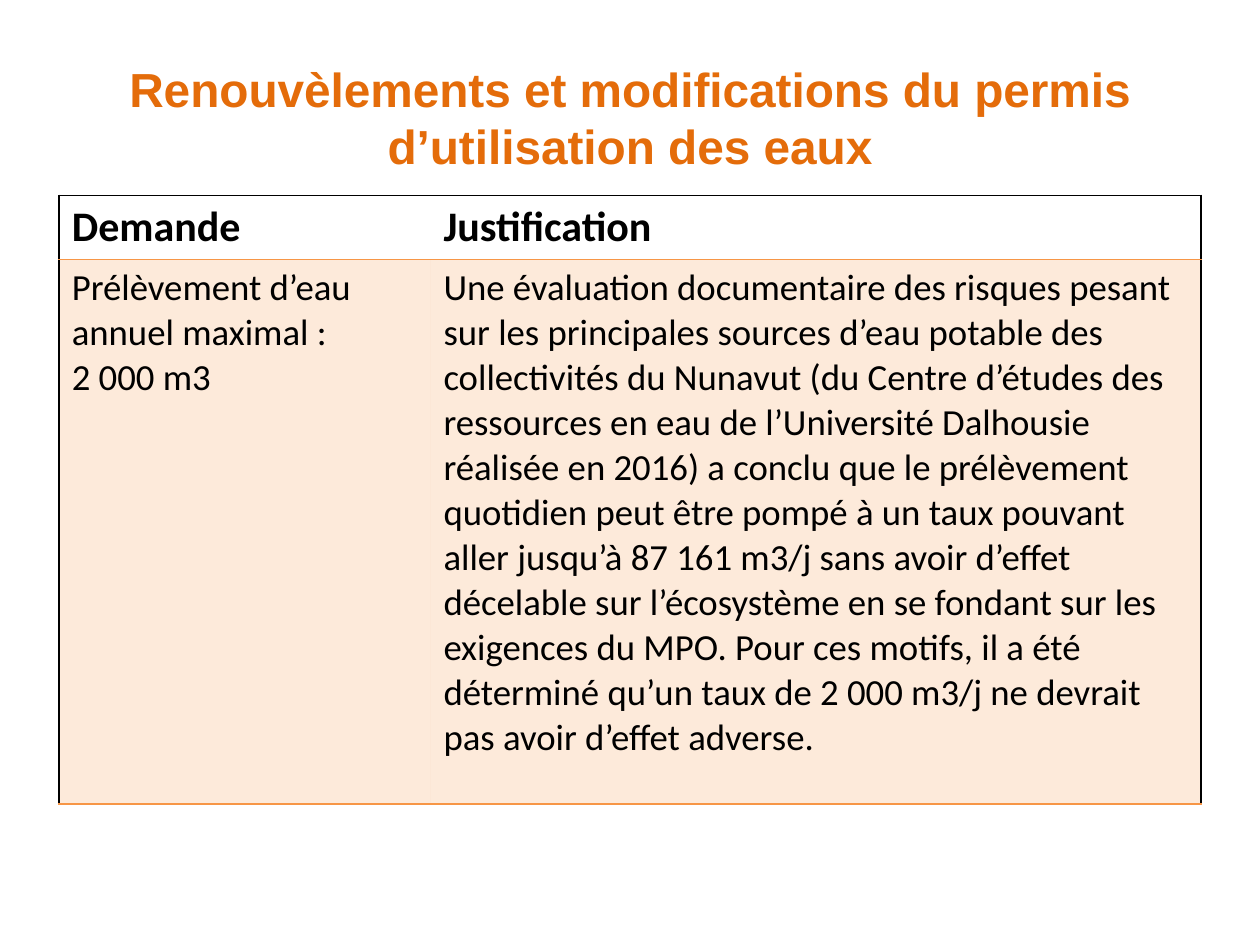
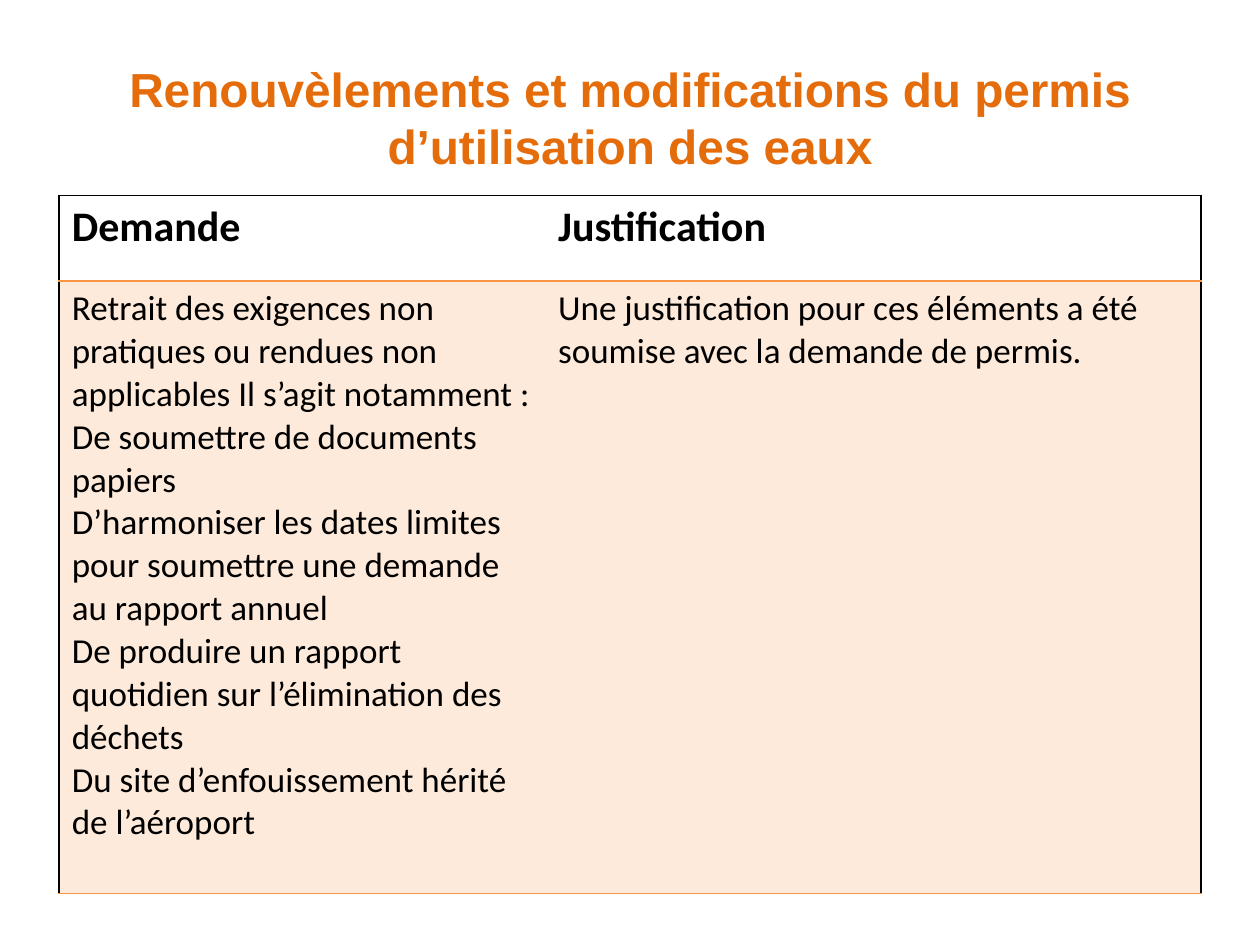
import pptx
import pptx.util
import pptx.dml.color
import pptx.enum.text
import pptx.oxml
import pptx.oxml.ns

Inches, Pt = pptx.util.Inches, pptx.util.Pt
Color = pptx.dml.color.RGBColor
qn = pptx.oxml.ns.qn

WIDE, HIGH = Inches(10), Inches(7.5)
BLACK = Color(0x00, 0x00, 0x00)
ORANGE = Color(0xF7, 0x96, 0x46)
RUST = Color(0xE4, 0x6C, 0x0A)
TINT = 20
PLAIN = "{2D5ABB26-0587-4C30-8999-92F81FD0307C}"

EDGE = 0.047
TOP = Inches(1.55)
TITLE = "Renouvèlements et modifications du permis d’utilisation des eaux"
HEADS = ["Demande", "Justification"]

HEAD_FONT = {"name": "Arial", "size": Pt(27.3), "bold": True}
CELL_FONT = {"name": "Calibri", "bold": False}

PAGES = [
    {
        "split": 2.95 / 9.06,
        "rows": [0.51, 4.32],
        "size": 21,
        "body": [
            ["Prélèvement d’eau annuel maximal :", "2 000 m3"],
            ["Une évaluation documentaire des risques pesant sur les "
             "principales sources d’eau potable des collectivités du Nunavut "
             "(du Centre d’études des ressources en eau de l’Université "
             "Dalhousie réalisée en 2016) a conclu que le prélèvement "
             "quotidien peut être pompé à un taux pouvant aller jusqu’à "
             "87 161 m3/j sans avoir d’effet décelable sur l’écosystème en se "
             "fondant sur les exigences du MPO. Pour ces motifs, il a été "
             "déterminé qu’un taux de 2 000 m3/j ne devrait pas avoir "
             "d’effet adverse."],
        ],
    },
    {
        "split": 3.86 / 9.06,
        "rows": [0.68, 4.86],
        "size": 20,
        "body": [
            ["Retrait des exigences non pratiques ou rendues non applicables "
             "Il s’agit notamment :",
             "De soumettre de documents papiers",
             "D’harmoniser les dates limites pour soumettre une demande au "
             "rapport annuel",
             "De produire un rapport quotidien sur l’élimination des déchets",
             "Du site d’enfouissement hérité de l’aéroport"],
            ["Une justification pour ces éléments a été soumise avec la "
             "demande de permis."],
        ],
    },
]


def write(frame, lines, form, color):
    frame.text = "\n".join(lines)
    for para in frame.paragraphs:
        for run in para.runs:
            for key, value in form.items():
                setattr(run.font, key, value)
            run.font.color.rgb = color


def add_title(slide):
    frame = slide.shapes.add_textbox(0, int(HIGH * 0.04), WIDE, Inches(1.25)).text_frame
    frame.word_wrap = True
    frame.vertical_anchor = pptx.enum.text.MSO_ANCHOR.MIDDLE
    write(frame, [TITLE], HEAD_FONT, RUST)
    frame.paragraphs[0].alignment = pptx.enum.text.PP_ALIGN.CENTER


def tint(cell):
    """Fill the cell with see-through orange."""
    cell.fill.solid()
    cell.fill.fore_color.rgb = ORANGE
    for color in cell._tc.tcPr.iter(qn("a:srgbClr")):
        pptx.oxml.ns.qn("a:alpha")
        alpha = color.makeelement(qn("a:alpha"), {"val": str(TINT * 1000)})
        color.append(alpha)


def rule(cell, sides):
    """Draw 1 pt borders; sides maps L, R, T, B, in that order, to colours."""
    props = cell._tc.get_or_add_tcPr()
    for place, (side, color) in enumerate(sides.items()):
        line = pptx.oxml.parse_xml(
            f'<a:ln{side} {pptx.oxml.ns.nsdecls("a")} w="{Pt(1)}">'
            f'<a:solidFill><a:srgbClr val="{color}"/></a:solidFill></a:ln{side}>')
        props.insert(place, line)


def add_grid(slide, page):
    left = int(WIDE * EDGE)
    width = WIDE - 2 * left
    frame = slide.shapes.add_table(2, 2, left, TOP, width, Inches(sum(page["rows"])))
    table = frame.table
    table.horz_banding = table.first_row = False
    for style in frame._element.iter(qn("a:tableStyleId")):
        style.text = PLAIN

    first = int(width * page["split"])
    table.columns[0].width, table.columns[1].width = first, width - first
    for row, height in zip(table.rows, page["rows"]):
        row.height = Inches(height)

    head = {**CELL_FONT, "size": Pt(24), "bold": True}
    body = {**CELL_FONT, "size": Pt(page["size"])}
    for col, side in enumerate("LR"):
        top, low = table.cell(0, col), table.cell(1, col)
        write(top.text_frame, [HEADS[col]], head, BLACK)
        write(low.text_frame, page["body"][col], body, BLACK)
        tint(low)
        rule(top, {side: BLACK, "T": BLACK, "B": ORANGE})
        rule(low, {side: BLACK, "T": ORANGE, "B": ORANGE})


def main():
    deck = pptx.Presentation()
    deck.slide_width, deck.slide_height = WIDE, HIGH
    for page in PAGES:
        slide = deck.slides.add_slide(deck.slide_layouts[6])
        add_title(slide)
        add_grid(slide, page)
    deck.save("out.pptx")


if __name__ == "__main__":
    main()
